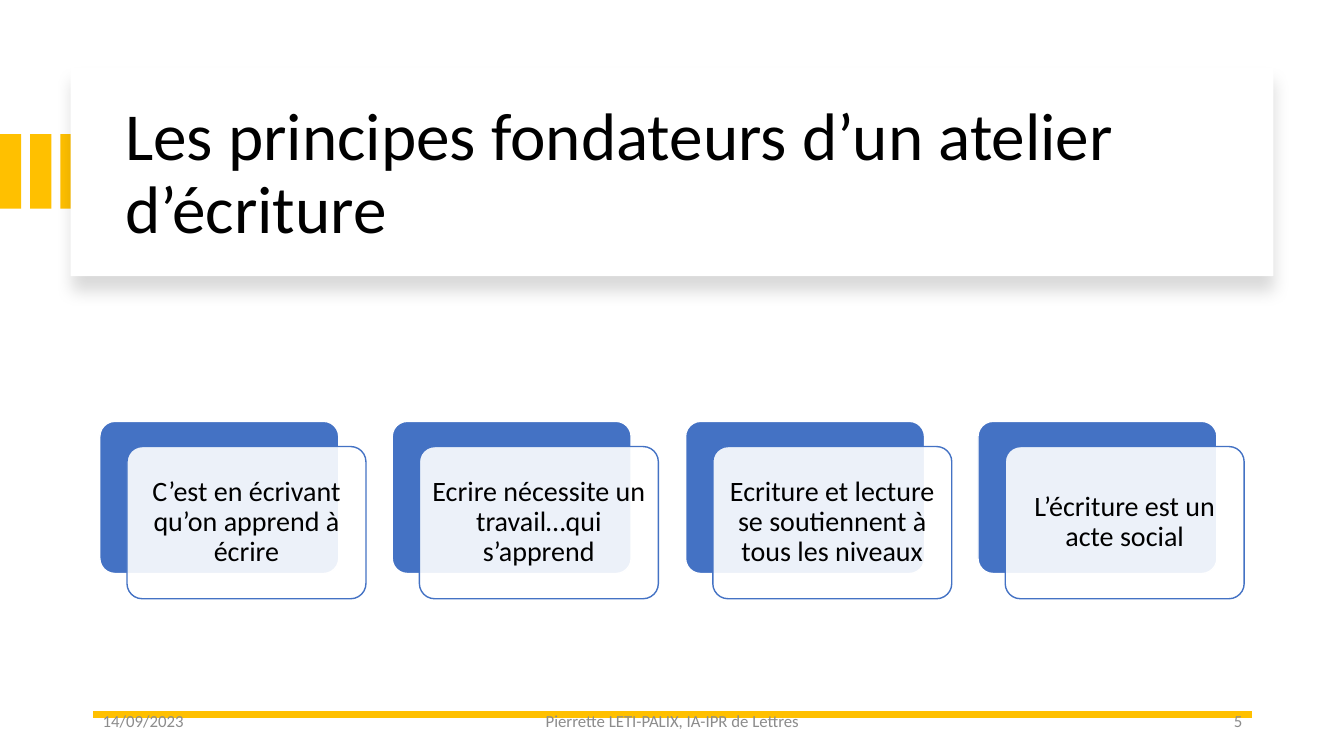
from lxml import etree
from pptx import Presentation
from pptx.dml.color import RGBColor
from pptx.enum.shapes import MSO_CONNECTOR, MSO_SHAPE
from pptx.enum.text import MSO_ANCHOR, MSO_AUTO_SIZE, PP_ALIGN
from pptx.oxml.ns import qn
from pptx.util import Pt

PX = 9144  # 100 px to the inch
RECT, ROUND = MSO_SHAPE.RECTANGLE, MSO_SHAPE.ROUNDED_RECTANGLE
STRAIGHT = MSO_CONNECTOR.STRAIGHT
MIDDLE, NO_FIT = MSO_ANCHOR.MIDDLE, MSO_AUTO_SIZE.NONE
LEFT, CENTER, RIGHT = PP_ALIGN.LEFT, PP_ALIGN.CENTER, PP_ALIGN.RIGHT

FONT = "Calibri"
COLORS = {
    "black": "000000",
    "white": "FFFFFF",
    "gold": "FFC000",
    "blue": "4472C4",
    "gray": "8C8C8C",
}
TITLE = "Les principes fondateurs d’un atelier d’écriture"
IDEAS = [
    "C’est en écrivant qu’on apprend à écrire",
    "Ecrire nécessite un travail…qui s’apprend",
    "Ecriture et lecture se soutiennent à tous les niveaux",
    "L’écriture est un acte social",
]
FOOT = [
    ("14/09/2023", 0, 300, LEFT),
    ("Pierrette LETI-PALIX, IA-IPR de Lettres", 350, 450, CENTER),
    ("5", 850, 300, RIGHT),
]


def emu(*sizes):
    return [size * PX for size in sizes]


def rgb(name):
    return RGBColor.from_string(COLORS[name])


def write(shape, text, size=20, color="black", align=LEFT, inset=None,
          lead=None, after=None):
    frame = shape.text_frame
    frame.word_wrap = True
    frame.auto_size = NO_FIT
    frame.vertical_anchor = MIDDLE
    if inset is not None:
        frame.margin_left = frame.margin_right = inset * PX
        frame.margin_top = frame.margin_bottom = inset * PX
    para = frame.paragraphs[0]
    para.alignment = align
    para.line_spacing = lead
    if after is not None:
        para.space_after = Pt(after)
    run = para.add_run()
    run.text = text
    run.font.name = FONT
    run.font.size = Pt(size)
    run.font.color.rgb = rgb(color)


def block(shapes, kind, box, fill, line=None):
    shape = shapes.add_shape(kind, *emu(*box))
    shape.shadow.inherit = False
    shape.fill.solid()
    shape.fill.fore_color.rgb = rgb(fill)
    if line:
        shape.line.color.rgb = rgb(line)
        shape.line.width = Pt(1)
    else:
        shape.line.fill.background()
    return shape


def fade(shape, part):
    """Set the opacity of a solid fill, in percent."""
    color = shape.fill._xPr.find(qn("a:solidFill"))[0]
    etree.SubElement(color, qn("a:alpha"), val=str(part * 1000))


def shade(shape):
    """Cast a soft shadow straight down."""
    effects = shape._element.spPr.find(qn("a:effectLst"))
    outer = etree.SubElement(
        effects, qn("a:outerShdw"), blurRad=str(Pt(11)), dist=str(Pt(10)),
        dir="5400000", algn="t", rotWithShape="0")
    color = etree.SubElement(outer, qn("a:srgbClr"), val=COLORS["black"])
    etree.SubElement(color, qn("a:alpha"), val="15000")


def header(slide, x, y, w, h):
    bars = slide.shapes.add_group_shape()
    for i in range(3):
        block(bars.shapes, RECT, (30 * i - 0, y + 66, 21, 74), "gold")
    panel = block(slide.shapes, RECT, (x, y, w, h), "white")
    shade(panel)
    title = slide.shapes.title
    title.left, title.top, title.width, title.height = emu(
        x + 44, y + 22, w - 80, h - 37)
    write(title, TITLE, size=48, lead=0.9)
    # The title sits above the panel
    slide.shapes._spTree.append(title._element)


def card(shapes, x, y, w, h, text):
    back = block(shapes, ROUND, (x, y, w, h), "blue", "white")
    front = block(shapes, ROUND, (x + 27, y + 25, w, h), "white", "blue")
    for shape in (back, front):
        shape.adjustments[0] = 0.1
    fade(front, 90)
    write(front, text, align=CENTER, inset=8, lead=0.9, after=7)


def cards(slide, x, y, w, h):
    group = slide.shapes.add_group_shape()
    wide = 237
    step = (w - wide - 27) / (len(IDEAS) - 1)
    for i, text in enumerate(IDEAS):
        card(group.shapes, x + round(i * step), y, wide, h - 25, text)


def footer(slide, x, y, w, h):
    rule = slide.shapes.add_connector(
        STRAIGHT, *emu(x + w, y + 14, x, y + 14))
    rule.line.color.rgb = rgb("gold")
    rule.line.width = Pt(4.5)
    etree.SubElement(rule._element.spPr, qn("a:effectLst"))
    for text, left, wide, align in FOOT:
        box = slide.shapes.add_textbox(*emu(x + left, y, wide, h))
        write(box, text, size=12, color="gray", align=align)


def main():
    deck = Presentation()
    deck.slide_width, deck.slide_height = emu(1333, 750)
    slide = deck.slides.add_slide(deck.slide_layouts[5])
    header(slide, 70, 67, 1193, 207)
    cards(slide, 99, 418, 1135, 176)
    footer(slide, 92, 695, 1150, 40)
    deck.save("out.pptx")


if __name__ == "__main__":
    main()
